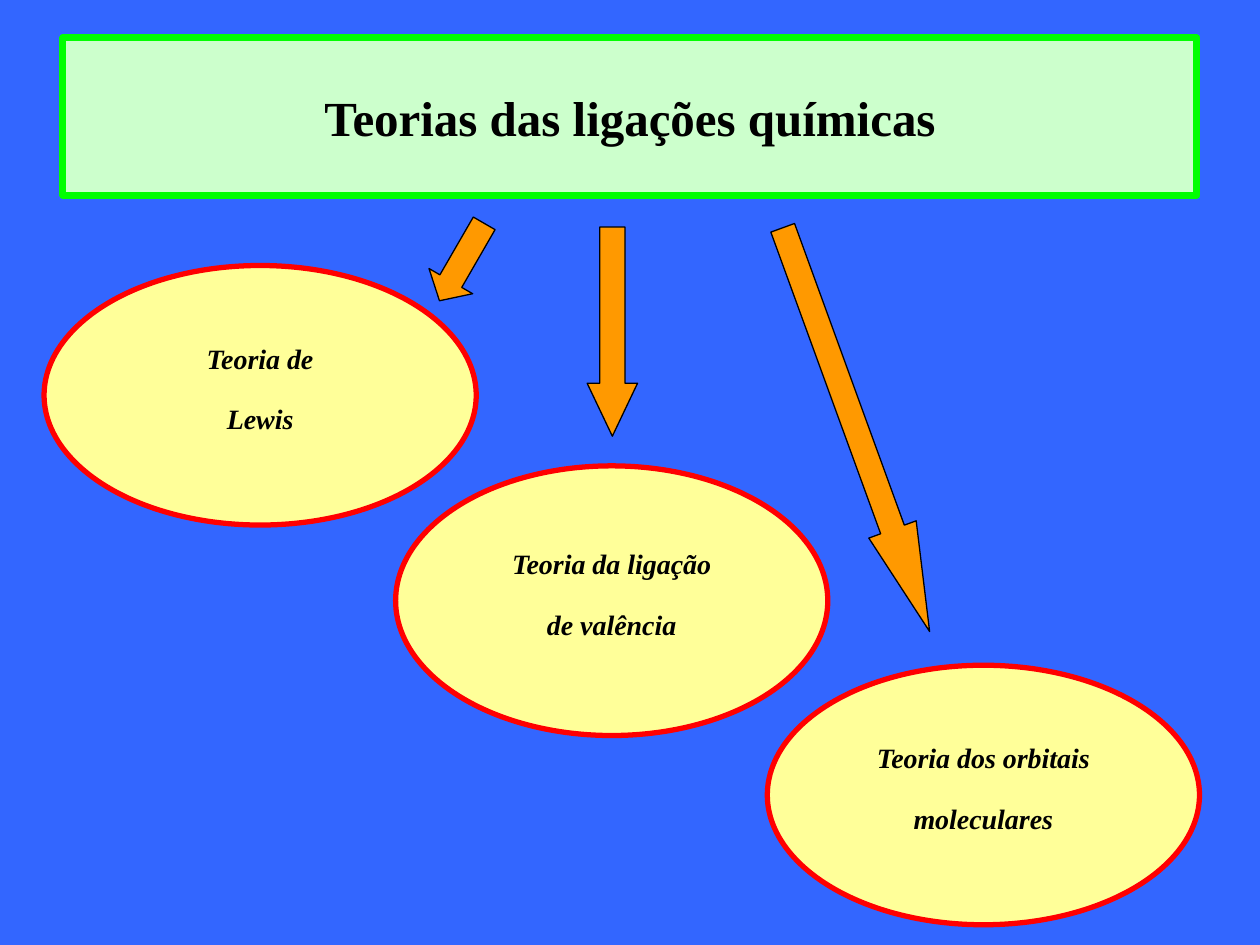
"""Build the slide on theories of chemical bonds."""
from pptx import Presentation
from pptx.dml.color import RGBColor
from pptx.enum.shapes import MSO_SHAPE
from pptx.enum.text import MSO_ANCHOR, PP_ALIGN
from pptx.util import Inches, Pt

RECT, OVAL, ARROW = MSO_SHAPE.RECTANGLE, MSO_SHAPE.OVAL, MSO_SHAPE.RIGHT_ARROW
MIDDLE, CENTER = MSO_ANCHOR.MIDDLE, PP_ALIGN.CENTER
WIDE, HIGH = 10, 7.5
FONT = "Times New Roman"
COLORS = {
    "back": "3366FF", "mint": "CCFFCC", "green": "00FF00", "cream": "FFFF99",
    "red": "FF0000", "orange": "FF9900", "black": "000000",
}
TITLE = "Teorias das ligações químicas"
OVALS = [
    (["Teoria de", "Lewis"], 0.035, 0.281, 2.06),
    (["Teoria dos orbitais", "moleculares"], 0.609, 0.704, 2.06),
    (["Teoria da ligação", "de valência"], 0.314, 0.493, 2.14),
]
OVAL_W, ARROW_H = 3.43, 0.4
ARROWS = [
    (0.486, 0.351, 1.66, 90, 1.05),
    (0.6795, 0.4547, 3.41, 70, 2.155),
    (0.3665, 0.2773, 0.71, 120, 0.45),
]


def tint(name):
    return RGBColor.from_string(COLORS[name])


def draw(slide, kind, box, fill, line, width):
    shape = slide.shapes.add_shape(kind, *[Inches(n) for n in box])
    shape.shadow.inherit = False
    shape.fill.solid()
    shape.fill.fore_color.rgb = tint(fill)
    shape.line.color.rgb = tint(line)
    shape.line.width = Pt(width)
    return shape


def write(shape, lines, size=28, italic=False, wrap=True, gap=0, lift=0):
    frame = shape.text_frame
    frame.word_wrap = wrap
    frame.vertical_anchor = MIDDLE
    frame.margin_bottom = Inches(0.05 + lift)
    for i, text in enumerate(lines):
        para = frame.add_paragraph() if i else frame.paragraphs[0]
        para.alignment = CENTER
        para.space_after = Pt(gap if i < len(lines) - 1 else 0)
        run = para.add_run()
        run.text = text
        font = run.font
        font.name, font.size = FONT, Pt(size)
        font.bold, font.italic = True, italic
        font.color.rgb = tint("black")


def main():
    deck = Presentation()
    deck.slide_width, deck.slide_height = Inches(WIDE), Inches(HIGH)
    slide = deck.slides.add_slide(deck.slide_layouts[6])
    slide.background.fill.solid()
    slide.background.fill.fore_color.rgb = tint("back")

    for lines, left, top, high in OVALS:
        box = (left * WIDE, top * HIGH, OVAL_W, high)
        oval = draw(slide, OVAL, box, "cream", "red", 3)
        write(oval, lines, size=16, italic=True, wrap=False, gap=15.3, lift=0.11)

    for mid_x, mid_y, length, angle, head in ARROWS:
        box = (mid_x * WIDE - length / 2, mid_y * HIGH - ARROW_H / 2, length, ARROW_H)
        arrow = draw(slide, ARROW, box, "orange", "black", 0.75)
        arrow.adjustments[0], arrow.adjustments[1] = 0.5, head
        arrow.rotation = angle

    box = (0.05 * WIDE, 0.04 * HIGH, 0.9 * WIDE, HIGH / 6)
    write(draw(slide, RECT, box, "mint", "green", 4), [TITLE])
    deck.save("out.pptx")


if __name__ == "__main__":
    main()
